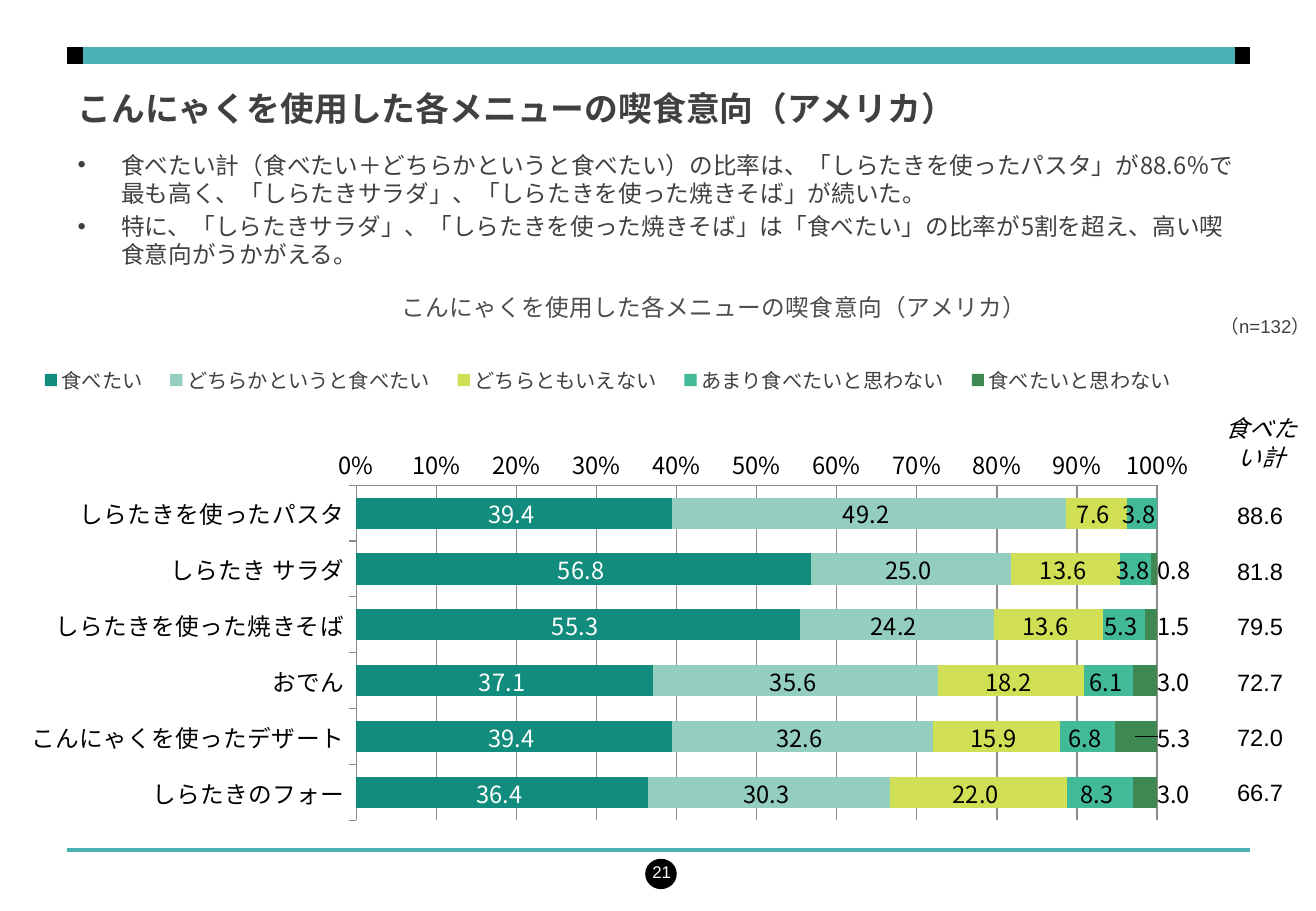
from lxml import etree
from pptx import Presentation
from pptx.chart.data import CategoryChartData
from pptx.dml.color import RGBColor
from pptx.enum.chart import XL_CHART_TYPE, XL_LABEL_POSITION, XL_LEGEND_POSITION, XL_TICK_MARK
from pptx.enum.shapes import MSO_CONNECTOR, MSO_SHAPE
from pptx.enum.text import MSO_ANCHOR, PP_ALIGN
from pptx.oxml import parse_xml
from pptx.oxml.ns import nsdecls, qn
from pptx.util import Inches, Pt

CENTER, RIGHT, LEFT = PP_ALIGN.CENTER, PP_ALIGN.RIGHT, PP_ALIGN.LEFT
MIDDLE, TOP = MSO_ANCHOR.MIDDLE, MSO_ANCHOR.TOP
LABEL_CENTER = XL_LABEL_POSITION.CENTER
JP = "Noto Sans CJK JP"
COLORS = {"teal": "4AB1B5", "black": "000000", "white": "FFFFFF", "text": "404040",
          "title": "4D4D4D", "axis": "8C8C8C"}
COLORS = {name: RGBColor.from_string(value) for name, value in COLORS.items()}

prs = Presentation()
prs.slide_width, prs.slide_height = Inches(10.83), Inches(7.5)
slide = prs.slides.add_slide(prs.slide_layouts[6])


def set_font(font, size, color, name=JP, bold=False, italic=False):
    font.size, font.name, font.bold, font.italic = Pt(size), name, bold, italic
    font.color.rgb = COLORS[color]


def add_text(left, top, width, height, lines, size, color, name=JP, align=LEFT,
             anchor=TOP, bold=False, italic=False):
    frame = slide.shapes.add_textbox(Inches(left), Inches(top), Inches(width), Inches(height)).text_frame
    frame.word_wrap, frame.vertical_anchor = True, anchor
    frame.text = "\n".join(lines)
    for paragraph in frame.paragraphs:
        paragraph.alignment = align
        for run in paragraph.runs:
            set_font(run.font, size, color, name, bold, italic)
    return frame


# Frame lines and page number
for start, end, y, color, weight in [(0.55, 10.29, 0.46, "teal", 10), (0.55, 0.68, 0.46, "black", 10),
                                     (10.16, 10.29, 0.46, "black", 10), (0.55, 10.29, 7, "teal", 2.25)]:
    rule = slide.shapes.add_connector(MSO_CONNECTOR.STRAIGHT, Inches(start), Inches(y), Inches(end), Inches(y))
    rule.line.color.rgb, rule.line.width = COLORS[color], Pt(weight)
    etree.SubElement(rule._element.spPr, qn("a:effectLst"))

page_disc = slide.shapes.add_shape(MSO_SHAPE.OVAL, Inches(5.31), Inches(7.07), Inches(0.26), Inches(0.25))
page_disc.shadow.inherit = False
page_disc.fill.solid()
page_disc.fill.fore_color.rgb = COLORS["black"]
page_disc.line.fill.background()
add_text(5.13, 6.98, 0.49, 0.4, ["21"], 10, "white", "Arial", RIGHT, MIDDLE)

# Headline and findings
HEADLINE = "こんにゃくを使用した各メニューの喫食意向（アメリカ）"
add_text(0.54, 0.67, 9.75, 0.43, [HEADLINE], 20, "text", bold=True)
findings = add_text(0.54, 1.19, 9.75, 1.1, [
    "食べたい計（食べたい＋どちらかというと食べたい）の比率は、「しらたきを使ったパスタ」が88.6％で最も高く、"
    "「しらたきサラダ」、「しらたきを使った焼きそば」が続いた。",
    "特に、「しらたきサラダ」、「しらたきを使った焼きそば」は「食べたい」の比率が5割を超え、"
    "高い喫食意向がうかがえる。"], 14, "text")
for finding in findings.paragraphs:
    props = finding._p.get_or_add_pPr()
    props.set("marL", str(Inches(0.36)))
    props.set("indent", str(-Inches(0.36)))
    etree.SubElement(props, qn("a:buFont")).set("typeface", "Arial")
    etree.SubElement(props, qn("a:buChar")).set("char", "•")
findings.paragraphs[1].space_before = Pt(2.8)

# Stacked chart
ANSWERS = [("食べたい", [39.4, 56.8, 55.3, 37.1, 39.4, 36.4], "128D7D"),
           ("どちらかというと食べたい", [49.2, 25, 24.2, 35.6, 32.6, 30.3], "94CEBE"),
           ("どちらともいえない", [7.6, 13.6, 13.6, 18.2, 15.9, 22], "D0DF53"),
           ("あまり食べたいと思わない", [3.8, 3.8, 5.3, 6.1, 6.8, 8.3], "42BA97"),
           ("食べたいと思わない", [0, 0.8, 1.5, 3, 5.3, 3], "3E8853")]
data = CategoryChartData(number_format="0.0_ ")
data.categories = ["しらたきを使ったパスタ", "しらたき サラダ", "しらたきを使った焼きそば",
                   "おでん", "こんにゃくを使ったデザート", "しらたきのフォー"]
for answer, shares, _ in ANSWERS:
    data.add_series(answer, shares)
chart = slide.shapes.add_chart(XL_CHART_TYPE.BAR_STACKED_100, Inches(0), Inches(2.18),
                               Inches(9.91), Inches(4.74), data).chart
set_font(chart.font, 14, "black")


def layout_xml(target="", **position):
    """Manual layout; position holds x, y, w, h as fractions of the chart."""
    inner = f'<c:layoutTarget val="{target}"/>' if target else ""
    if target or "w" in position:
        inner += '<c:xMode val="edge"/><c:yMode val="edge"/>'
    inner += "".join(f'<c:{key} val="{value:.3f}"/>' for key, value in position.items())
    return parse_xml(f'<c:layout {nsdecls("c")}><c:manualLayout>{inner}</c:manualLayout></c:layout>')


PLOT_WIDTH = 0.665
plot_area = chart._chartSpace.chart.plotArea
for old in plot_area.findall(qn("c:layout")):
    plot_area.remove(old)
plot_area.insert(0, layout_xml("inner", x=0.296, y=0.383, w=PLOT_WIDTH, h=0.582))

chart.has_title = True
chart.chart_title.text_frame.text = HEADLINE
set_font(chart.chart_title.text_frame.paragraphs[0].runs[0].font, 14, "title")
title = chart.chart_title._element
for old in title.findall(qn("c:layout")):
    title.remove(old)
title.find(qn("c:tx")).addnext(layout_xml(x=0.33, y=0.03, w=0.5, h=0.07))
chart.chart_title.include_in_layout = False

chart.has_legend = True
chart.legend.position = XL_LEGEND_POSITION.TOP
chart.legend.include_in_layout = False
set_font(chart.legend.font, 12, "text")
legend = chart.legend._element
for old in legend.findall(qn("c:layout")):
    legend.remove(old)
legend.find(qn("c:legendPos")).addnext(layout_xml(x=0.02, y=0.16, w=0.97, h=0.08))

plot = chart.plots[0]
plot.gap_width, plot.overlap, plot.vary_by_categories = 79, 100, False
for series, (_, shares, color) in zip(plot.series, ANSWERS):
    series.format.fill.solid()
    series.format.fill.fore_color.rgb = RGBColor.from_string(color)
    labels = series.data_labels
    labels.show_value, labels.position = True, LABEL_CENTER
    labels.number_format, labels.number_format_is_linked = "0.0_ ", False
    set_font(labels.font, 14, "white" if series.name == "食べたい" else "black")

# The last answer's labels stand just right of the bars
for index, share in enumerate(ANSWERS[-1][1]):
    label = plot.series[len(ANSWERS) - 1].points[index].data_label
    label.position = LABEL_CENTER
    set_font(label.font, 14, "black")
    element = label._dLbl
    if share:
        element.find(qn("c:idx")).addnext(layout_xml(x=share / 200 * PLOT_WIDTH + 0.016, y=0))
    else:
        for child in list(element)[1:]:
            element.remove(child)
        etree.SubElement(element, qn("c:delete")).set("val", "1")

menus, percent = chart.category_axis, chart.value_axis
menus.reverse_order = True
menus.major_tick_mark, percent.major_tick_mark = XL_TICK_MARK.OUTSIDE, XL_TICK_MARK.NONE
percent.minimum_scale, percent.maximum_scale, percent.major_unit = 0, 1, 0.1
percent.tick_labels.number_format, percent.tick_labels.number_format_is_linked = "0%", False
percent.has_major_gridlines = True
for line in (menus.format.line, percent.format.line, percent.major_gridlines.format.line):
    line.color.rgb, line.width = COLORS["axis"], Pt(0.75)
for axis in (menus, percent):
    set_font(axis.tick_labels.font, 14, "black")

# Totals beside the bars
totals = ["88.6", "81.8", "79.5", "72.7", "72.0", "66.7"]
table = slide.shapes.add_table(len(totals), 1, Inches(9.91), Inches(4.02), Inches(0.92), Inches(2.74)).table
table.first_row = table.horz_banding = False
for row, total in enumerate(totals):
    cell = table.cell(row, 0)
    cell.fill.background()
    cell.vertical_anchor = MIDDLE
    cell.margin_left = cell.margin_right = cell.margin_top = Inches(0.01)
    cell.margin_bottom = 0
    cell.text = total
    paragraph = cell.text_frame.paragraphs[0]
    paragraph.alignment = CENTER
    set_font(paragraph.runs[0].font, 14, "black", "Arial")
add_text(9.92, 3.36, 0.92, 0.57, ["食べたい計"], 14, "black", "Arial", CENTER, italic=True)
add_text(9.68, 2.54, 1.2, 0.29, ["（n=132）"], 11, "text", "Arial", RIGHT)
prs.save("out.pptx")
